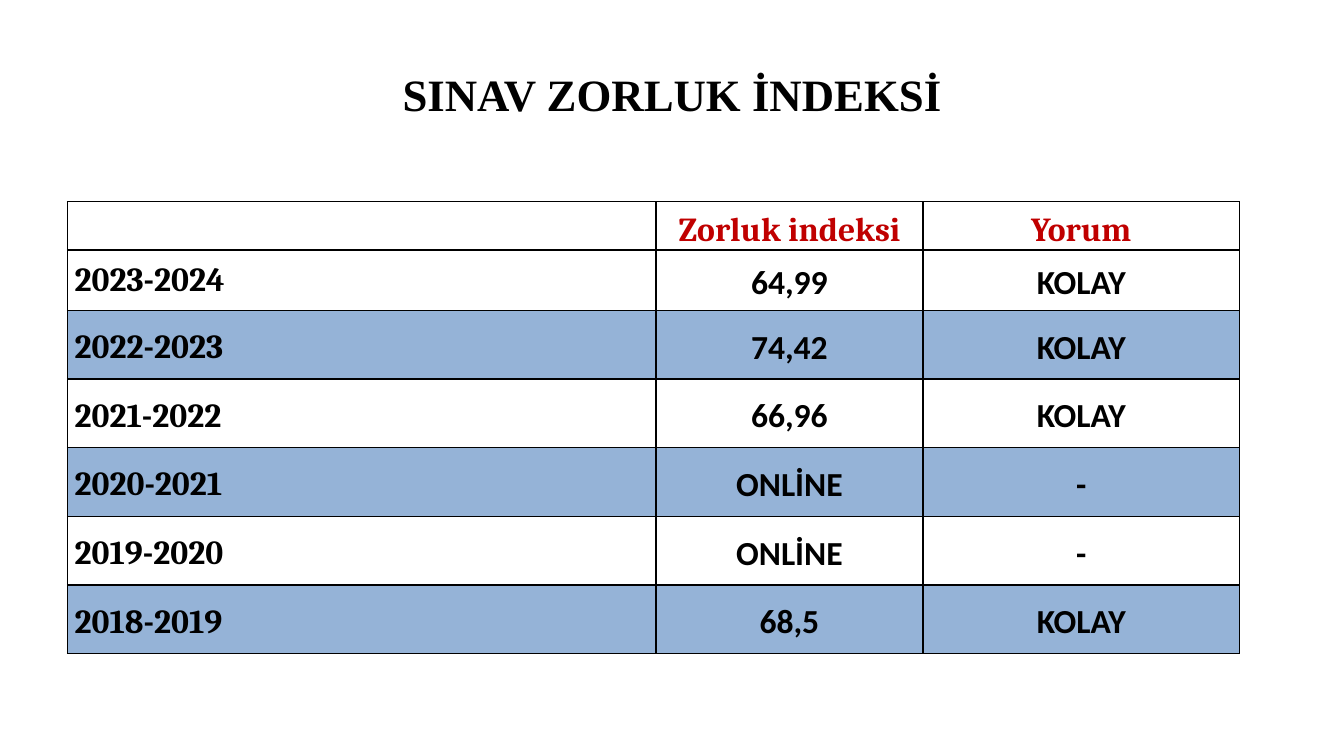
from lxml.etree import SubElement
from pptx import Presentation
from pptx.dml.color import RGBColor
from pptx.enum.text import MSO_ANCHOR as Anchor, PP_ALIGN as Align
from pptx.oxml.ns import qn
from pptx.util import Cm, Pt

COLUMN_WIDTHS = [14.83, 6.73, 7.98]
ROW_HEIGHTS = [1.22, 1.52] + [1.73] * 5
ROWS = [
    ("", "Zorluk indeksi", "Yorum"),
    ("2023-2024", "64,99", "KOLAY"),
    ("2022-2023", "74,42", "KOLAY"),
    ("2021-2022", "66,96", "KOLAY"),
    ("2020-2021", "ONLİNE", "-"),
    ("2019-2020", "ONLİNE", "-"),
    ("2018-2019", "68,5", "KOLAY"),
]


def color(hex_value):
    return RGBColor.from_string(hex_value)


def set_all(target, values):
    for name, value in values.items():
        setattr(target, name, value)


class SlideBuilder:
    black = "000000"
    header_red = "C00000"
    band_blue = "95B3D7"
    cell_margins = {"margin_left": Cm(0.18), "margin_right": Cm(0.18),
                    "margin_top": 0, "margin_bottom": 0}

    def __init__(self, slide):
        self.slide = slide

    def add_text(self, paragraph, text, font, size, font_color, **layout):
        run = paragraph.add_run()
        run.text = text
        set_all(run.font, {"name": font, "size": Pt(size), "bold": True})
        run.font.color.rgb = color(font_color)
        set_all(paragraph, layout)

    def title(self, text, left, top, width, height):
        box = self.slide.shapes.add_textbox(Cm(left), Cm(top), Cm(width), Cm(height))
        frame = box.text_frame
        set_all(frame, {"word_wrap": True, "vertical_anchor": Anchor.MIDDLE})
        self.add_text(frame.paragraphs[0], text, "Times New Roman", 32, self.black,
                      alignment=Align.CENTER)

    def borders(self, cell, top, bottom):
        """Draw all four cell borders; top and bottom are widths in points."""
        properties = cell._tc.get_or_add_tcPr()
        for side, width in {"L": 1, "R": 1, "T": top, "B": bottom}.items():
            line = SubElement(properties, qn(f"a:ln{side}"), w=str(Pt(width)))
            fill = SubElement(line, qn("a:solidFill"))
            SubElement(fill, qn("a:srgbClr"), val=self.black)

    def cell(self, cell, text, row, column):
        is_header = row == 0
        set_all(cell, self.cell_margins)
        cell.vertical_anchor = Anchor.BOTTOM if is_header else Anchor.MIDDLE
        self.borders(cell, top=2.25 if row == 1 else 1, bottom=2.25 if is_header else 1)
        if row and row % 2 == 0:
            cell.fill.solid()
            cell.fill.fore_color.rgb = color(self.band_blue)
        else:
            cell.fill.background()
        if text:
            self.add_text(cell.text_frame.paragraphs[0], text,
                          "Cambria" if is_header or column == 0 else "Calibri", 24,
                          self.header_red if is_header else self.black,
                          alignment=Align.CENTER if column else Align.LEFT,
                          line_spacing=1.0 if (row, column) == (1, 0) else 1.15)

    def table(self, rows, left, top, widths, heights):
        frame = self.slide.shapes.add_table(
            len(rows), len(widths), Cm(left), Cm(top), Cm(sum(widths)), Cm(sum(heights)))
        table = frame.table
        set_all(table, {"first_row": False, "horz_banding": False})
        for column, width in zip(table.columns, widths):
            column.width = Cm(width)
        for row, height in zip(table.rows, heights):
            row.height = Cm(height)
        for row, texts in enumerate(rows):
            for column, text in enumerate(texts):
                self.cell(table.cell(row, column), text, row, column)


def main():
    presentation = Presentation()
    set_all(presentation, {"slide_width": Cm(33.87), "slide_height": Cm(19.05)})
    slide = presentation.slides.add_slide(presentation.slide_layouts[6])
    builder = SlideBuilder(slide)
    builder.title("SINAV ZORLUK İNDEKSİ", 1.7, 0.76, 30.48, 3.18)
    builder.table(ROWS, 1.7, 5.08, COLUMN_WIDTHS, ROW_HEIGHTS)
    presentation.save("out.pptx")


if __name__ == "__main__":
    main()
